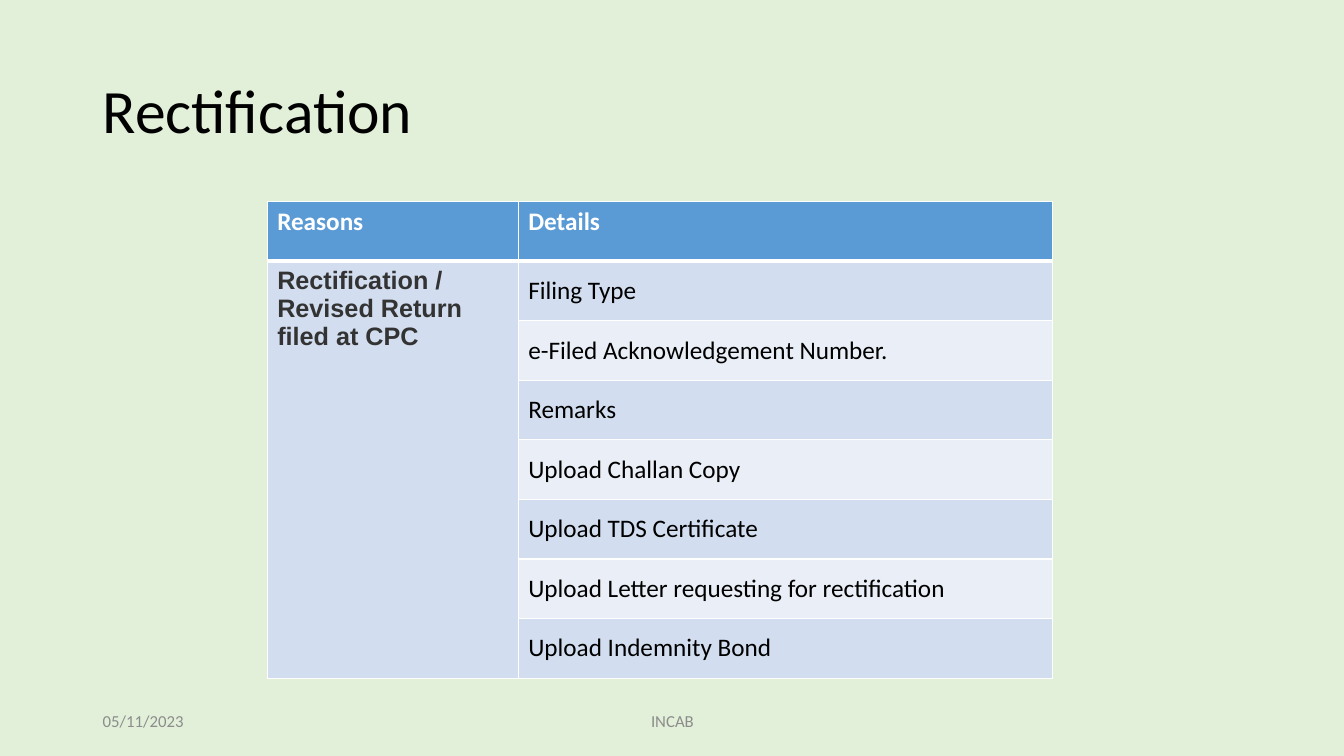
from dataclasses import dataclass

from lxml import etree
from pptx import Presentation
from pptx.dml.color import RGBColor
from pptx.enum import text
from pptx.oxml import ns
from pptx.util import Inches, Pt


@dataclass(frozen=True)
class Theme:
    background: str = "E2F0D9"
    header: str = "5B9BD5"
    bands: tuple = ("D2DEEF", "EAEFF7")
    white: str = "FFFFFF"
    ink: str = "000000"
    reason: str = "333333"
    footer: str = "8C8C8C"
    font: str = "Calibri"
    reason_font: str = "Arial"
    title_size: int = 44
    table_size: int = 18
    footer_size: int = 12


THEME = Theme()
DETAILS = [
    "Filing Type",
    "e-Filed Acknowledgement Number.",
    "Remarks",
    "Upload Challan Copy",
    "Upload TDS Certificate",
    "Upload Letter requesting for rectification",
    "Upload Indemnity Bond",
]


def write(tf, content, size, color, font=THEME.font, bold=False):
    p = tf.paragraphs[0]
    r = p.add_run()
    r.text = content
    values = {"name": font, "size": Pt(size), "bold": bold}
    for name, value in values.items():
        setattr(r.font, name, value)
    r.font.color.rgb = RGBColor.from_string(color)
    return p


def add_text(slide, box, content, size, color, **paragraph):
    tf = slide.shapes.add_textbox(*map(Inches, box)).text_frame
    tf.word_wrap = True
    tf.vertical_anchor = text.MSO_ANCHOR.MIDDLE
    p = write(tf, content, size, color)
    for name, value in paragraph.items():
        setattr(p, name, value)


def set_borders(cell, widths):
    tc_pr = cell._tc.get_or_add_tcPr()
    for index, (side, width) in enumerate(widths.items()):
        ln = etree.Element(ns.qn(f"a:ln{side}"), w=str(Pt(width)))
        fill = etree.SubElement(ln, ns.qn("a:solidFill"))
        etree.SubElement(fill, ns.qn("a:srgbClr"), val=THEME.white)
        tc_pr.insert(index, ln)


def style_cell(cell, fill, top=1, bottom=1):
    cell.fill.solid()
    cell.fill.fore_color.rgb = RGBColor.from_string(fill)
    set_borders(cell, {"L": 1, "R": 1, "T": top, "B": bottom})


def add_reasons_table(slide, box, column_widths):
    row_count = len(DETAILS) + 1
    table = slide.shapes.add_table(row_count, 2, *map(Inches, box)).table
    for column, width in zip(table.columns, column_widths):
        column.width = Inches(width)
    for row in table.rows:
        row.height = Inches(box[3] / row_count)

    for cell, label in zip(table.rows[0].cells, ("Reasons", "Details")):
        style_cell(cell, THEME.header, bottom=3)
        write(cell.text_frame, label, THEME.table_size, THEME.white, bold=True)

    for index, detail in enumerate(DETAILS):
        top = 3 if index == 0 else 1
        style_cell(table.cell(index + 1, 0), THEME.bands[0], top)
        cell = table.cell(index + 1, 1)
        style_cell(cell, THEME.bands[index % 2], top)
        cell.vertical_anchor = text.MSO_ANCHOR.MIDDLE
        write(cell.text_frame, detail, THEME.table_size, THEME.ink)

    reason = table.cell(1, 0)
    reason.merge(table.cell(row_count - 1, 0))
    write(reason.text_frame, "Rectification / Revised Return filed at CPC",
          THEME.table_size, THEME.reason, THEME.reason_font, True)


def main():
    prs = Presentation()
    prs.slide_width, prs.slide_height = Inches(13.33), Inches(7.5)
    slide = prs.slides.add_slide(prs.slide_layouts[6])
    slide.background.fill.solid()
    slide.background.fill.fore_color.rgb = RGBColor.from_string(THEME.background)

    add_text(slide, (0.92, 0.4, 11.5, 1.45), "Rectification",
             THEME.title_size, THEME.ink, line_spacing=0.9)
    add_reasons_table(slide, (2.65, 2, 7.79, 4.73), (2.49, 5.3))
    add_text(slide, (0.92, 6.95, 3, 0.4), "05/11/2023",
             THEME.footer_size, THEME.footer)
    add_text(slide, (4.42, 6.95, 4.5, 0.4), "INCAB",
             THEME.footer_size, THEME.footer, alignment=text.PP_ALIGN.CENTER)
    prs.save("out.pptx")


if __name__ == "__main__":
    main()
